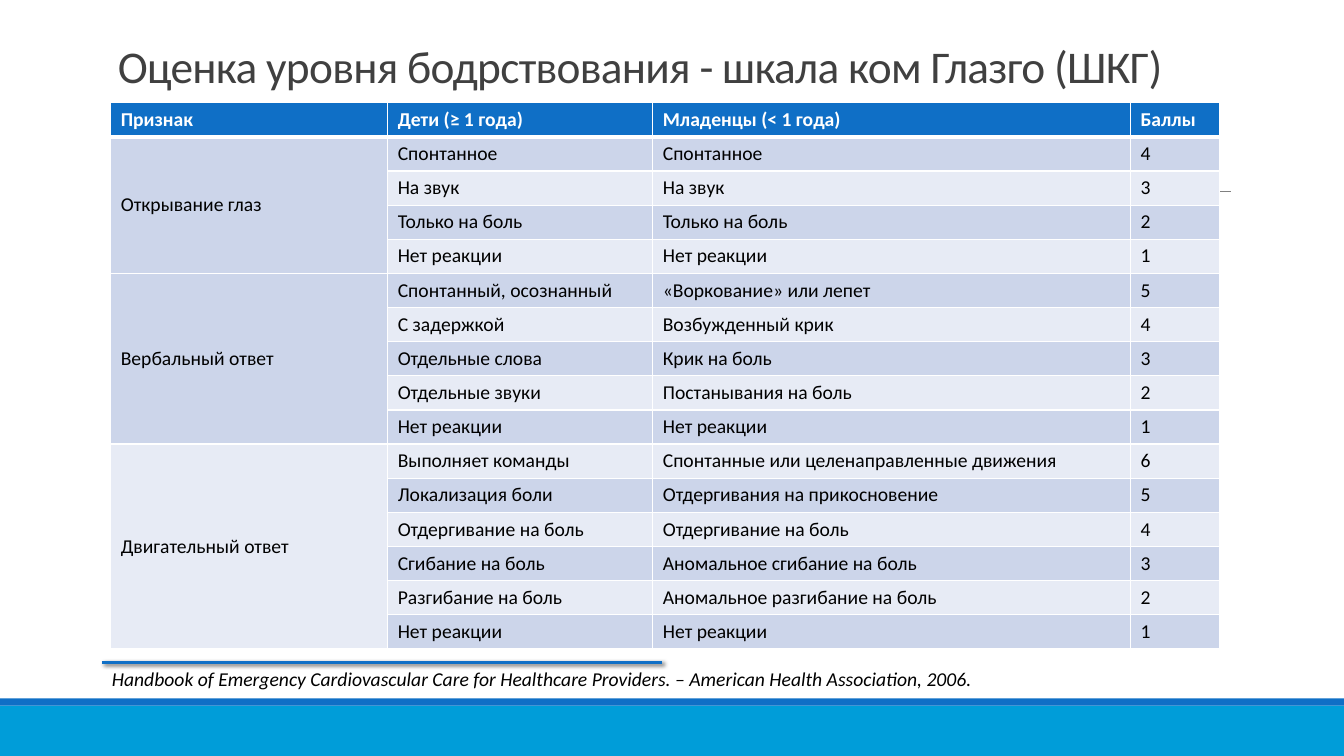
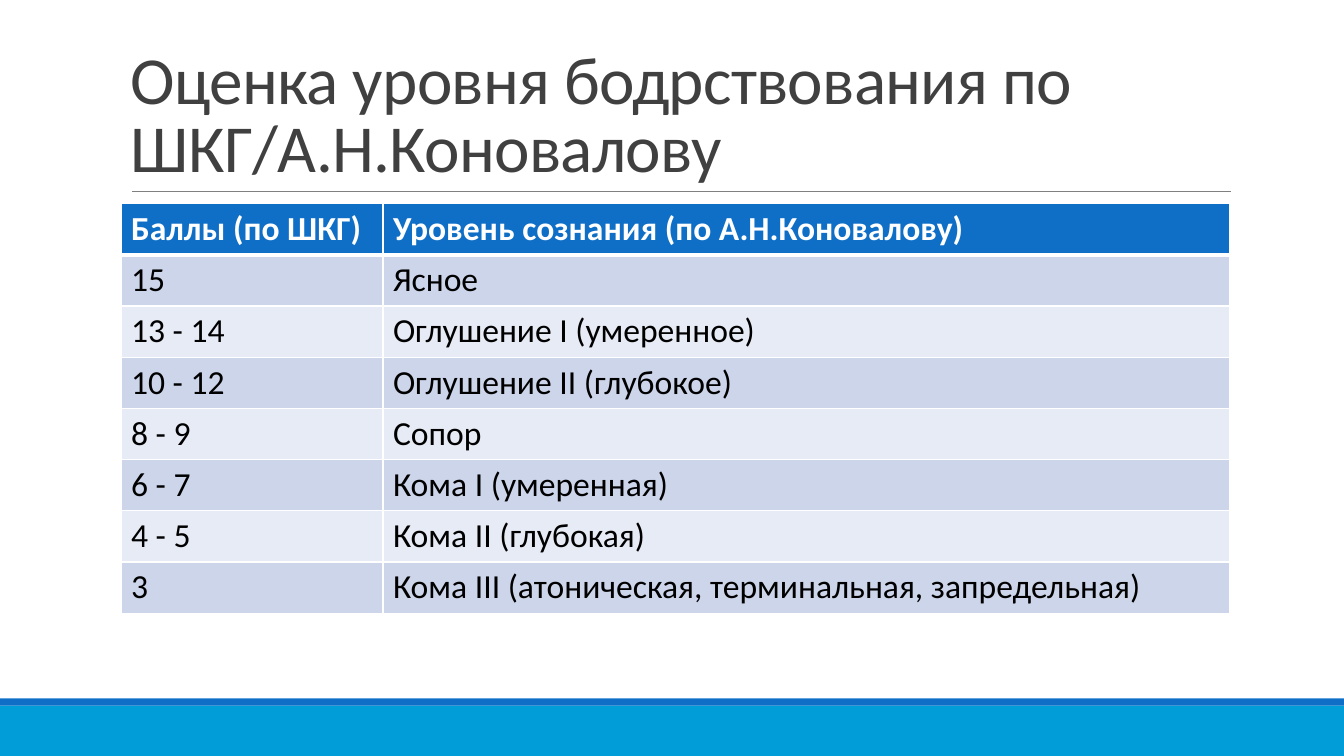
from dataclasses import dataclass

from lxml import etree
from pptx import Presentation
from pptx.dml.color import RGBColor
from pptx.enum.shapes import MSO_CONNECTOR, MSO_SHAPE
from pptx.enum.text import MSO_ANCHOR
from pptx.oxml.ns import qn
from pptx.util import Cm, Pt

STRAIGHT = MSO_CONNECTOR.STRAIGHT
RECTANGLE = MSO_SHAPE.RECTANGLE
BOTTOM = MSO_ANCHOR.BOTTOM
MIDDLE = MSO_ANCHOR.MIDDLE
TOP = MSO_ANCHOR.TOP

SLIDE_WIDTH = 33.87
SLIDE_HEIGHT = 19.05


@dataclass(frozen=True)
class Theme:
    font: str = "Calibri"
    white: str = "FFFFFF"
    ink: str = "000000"
    title: str = "404040"
    rule: str = "808080"
    accent: str = "0F6FC6"
    band: str = "009DD9"
    row_dark: str = "CCD5EA"
    row_light: str = "E7EBF5"
    title_size: float = 48
    small_title_size: float = 32.4
    table_size: float = 24
    small_size: float = 14


THEME = Theme()


class SlideBuilder:
    """Holds the deck, its style and the slide being filled."""

    def __init__(self, theme):
        self.theme = theme
        self.deck = Presentation()
        self.deck.slide_width = Cm(SLIDE_WIDTH)
        self.deck.slide_height = Cm(SLIDE_HEIGHT)
        self.slide = None

    def new_slide(self):
        """Start a slide with the bottom bands and the rule under the title."""
        self.slide = self.deck.slides.add_slide(self.deck.slide_layouts[6])
        self.band(17.78, 1.27, self.theme.band)
        self.band(17.6, 0.18, self.theme.accent)
        self.line(3.33, 31.01, 4.83, self.theme.rule, 0.5)

    def band(self, top, height, color):
        shape = self.slide.shapes.add_shape(
            RECTANGLE, 0, Cm(top), Cm(SLIDE_WIDTH), Cm(height))
        shape.shadow.inherit = False
        shape.fill.solid()
        shape.fill.fore_color.rgb = RGBColor.from_string(color)
        shape.line.fill.background()

    def line(self, left, right, top, color, width, shadow=False):
        line = self.slide.shapes.add_connector(
            STRAIGHT, Cm(left), Cm(top), Cm(right), Cm(top))
        line.line.color.rgb = RGBColor.from_string(color)
        line.line.width = Pt(width)
        effects = etree.SubElement(line._element.spPr, qn("a:effectLst"))
        if shadow:
            outer = etree.SubElement(
                effects, qn("a:outerShdw"), blurRad=str(Pt(3)),
                dist=str(Pt(2)), dir="2700000", rotWithShape="0")
            shade = etree.SubElement(outer, qn("a:srgbClr"), val=self.theme.ink)
            etree.SubElement(shade, qn("a:alpha"), val="60000")

    def format_text(self, frame, size, color, bold=False, italic=False):
        for para in frame.paragraphs:
            for span in para.runs:
                span.font.name = self.theme.font
                span.font.size = Pt(size)
                span.font.bold = bold
                span.font.italic = italic
                span.font.color.rgb = RGBColor.from_string(color)

    def text(self, left, top, height, text, size, color,
             anchor=TOP, italic=False):
        box = self.slide.shapes.add_textbox(
            Cm(left), Cm(top), Cm(27.94), Cm(height))
        frame = box.text_frame
        frame.word_wrap = True
        frame.vertical_anchor = anchor
        frame.text = text
        self.format_text(frame, size, color, italic=italic)
        return frame

    def title(self, left, height, text, size):
        frame = self.text(left, 0.79, height, text, size,
                          self.theme.title, BOTTOM)
        para = frame.paragraphs[0]
        para.line_spacing = 0.85
        for span in para.runs:
            span.font._element.set("spc", "-50")

    def cell_borders(self, cell, row):
        """White grid, with a thicker line below the header row."""
        widths = {"L": 1, "R": 1, "T": 3 if row == 1 else 1,
                  "B": 3 if row == 0 else 1}
        properties = cell._tc.get_or_add_tcPr()
        for side, width in widths.items():
            border = etree.SubElement(
                properties, qn(f"a:ln{side}"), w=str(Pt(width)))
            fill = etree.SubElement(border, qn("a:solidFill"))
            etree.SubElement(fill, qn("a:srgbClr"), val=self.theme.white)

    def table(self, left, top, widths, row_height, rows, size):
        theme = self.theme
        frame = self.slide.shapes.add_table(
            len(rows), len(widths), Cm(left), Cm(top),
            Cm(sum(widths)), Cm(row_height * len(rows)))
        table = frame.table
        table.horz_banding = False
        for column, width in zip(table.columns, widths):
            column.width = Cm(width)
        for row, values in enumerate(rows):
            table.rows[row].height = Cm(row_height)
            header = row == 0
            banding = theme.row_dark if row % 2 else theme.row_light
            for column, value in enumerate(values):
                cell = table.cell(row, column)
                cell.text = value
                self.format_text(cell.text_frame, size,
                                 theme.white if header else theme.ink, header)
                self.cell_borders(cell, row)
                cell.fill.solid()
                cell.fill.fore_color.rgb = RGBColor.from_string(
                    theme.accent if header else banding)
        return table


# Each sign lists its responses (children, infants) from best to worst
COMA_SCALE = {
    "Открывание глаз": [
        ("Спонтанное", "Спонтанное"),
        ("На звук", "На звук"),
        ("Только на боль", "Только на боль"),
        ("Нет реакции", "Нет реакции"),
    ],
    "Вербальный ответ": [
        ("Спонтанный, осознанный", "«Воркование» или лепет"),
        ("С задержкой", "Возбужденный крик"),
        ("Отдельные слова", "Крик на боль"),
        ("Отдельные звуки", "Постанывания на боль"),
        ("Нет реакции", "Нет реакции"),
    ],
    "Двигательный ответ": [
        ("Выполняет команды", "Спонтанные или целенаправленные движения"),
        ("Локализация боли", "Отдергивания на прикосновение"),
        ("Отдергивание на боль", "Отдергивание на боль"),
        ("Сгибание на боль", "Аномальное сгибание на боль"),
        ("Разгибание на боль", "Аномальное разгибание на боль"),
        ("Нет реакции", "Нет реакции"),
    ],
}

CONSCIOUSNESS_LEVELS = [
    ("Баллы (по ШКГ)", "Уровень сознания (по А.Н.Коновалову)"),
    ("15", "Ясное"),
    ("13 - 14", "Оглушение I (умеренное)"),
    ("10 - 12", "Оглушение II (глубокое)"),
    ("8 - 9", "Сопор"),
    ("6 - 7", "Кома I (умеренная)"),
    ("4 - 5", "Кома II (глубокая)"),
    ("3", "Кома III (атоническая, терминальная, запредельная)"),
]


def add_coma_scale(builder):
    builder.new_slide()
    builder.title(2.72, 1.68,
                  "Оценка уровня бодрствования - шкала ком Глазго (ШКГ)",
                  THEME.small_title_size)

    # Scores count down to 1 within each sign
    rows = [("Признак", "Дети (≥ 1 года)", "Младенцы (< 1 года)", "Баллы")]
    for sign, responses in COMA_SCALE.items():
        for index, (child, infant) in enumerate(responses):
            rows.append((sign if index == 0 else "", child, infant,
                         str(len(responses) - index)))
    table = builder.table(2.79, 2.59, (6.98, 6.68, 12.04, 2.24), 0.86,
                          rows, THEME.small_size)

    # One merged cell per sign
    first = 1
    for responses in COMA_SCALE.values():
        last = first + len(responses) - 1
        sign_cell = table.cell(first, 0)
        sign_cell.merge(table.cell(last, 0))
        sign_cell.vertical_anchor = MIDDLE
        first = last + 1

    # Source note
    builder.text(2.57, 16.69, 0.86,
                 "Handbook of Emergency Cardiovascular Care for Healthcare "
                 "Providers. – American Health Association, 2006.",
                 THEME.small_size, THEME.ink, italic=True)
    builder.line(2.57, 16.69, 16.69, THEME.accent, 2, shadow=True)


def add_consciousness_levels(builder):
    builder.new_slide()
    builder.title(3.05, 4.04,
                  "Оценка уровня бодрствования по ШКГ/А.Н.Коновалову",
                  THEME.title_size)
    builder.table(3.05, 5.13, (6.6, 21.34), 1.29,
                  CONSCIOUSNESS_LEVELS, THEME.table_size)


def main():
    builder = SlideBuilder(THEME)
    add_coma_scale(builder)
    add_consciousness_levels(builder)
    builder.deck.save("out.pptx")


if __name__ == "__main__":
    main()
